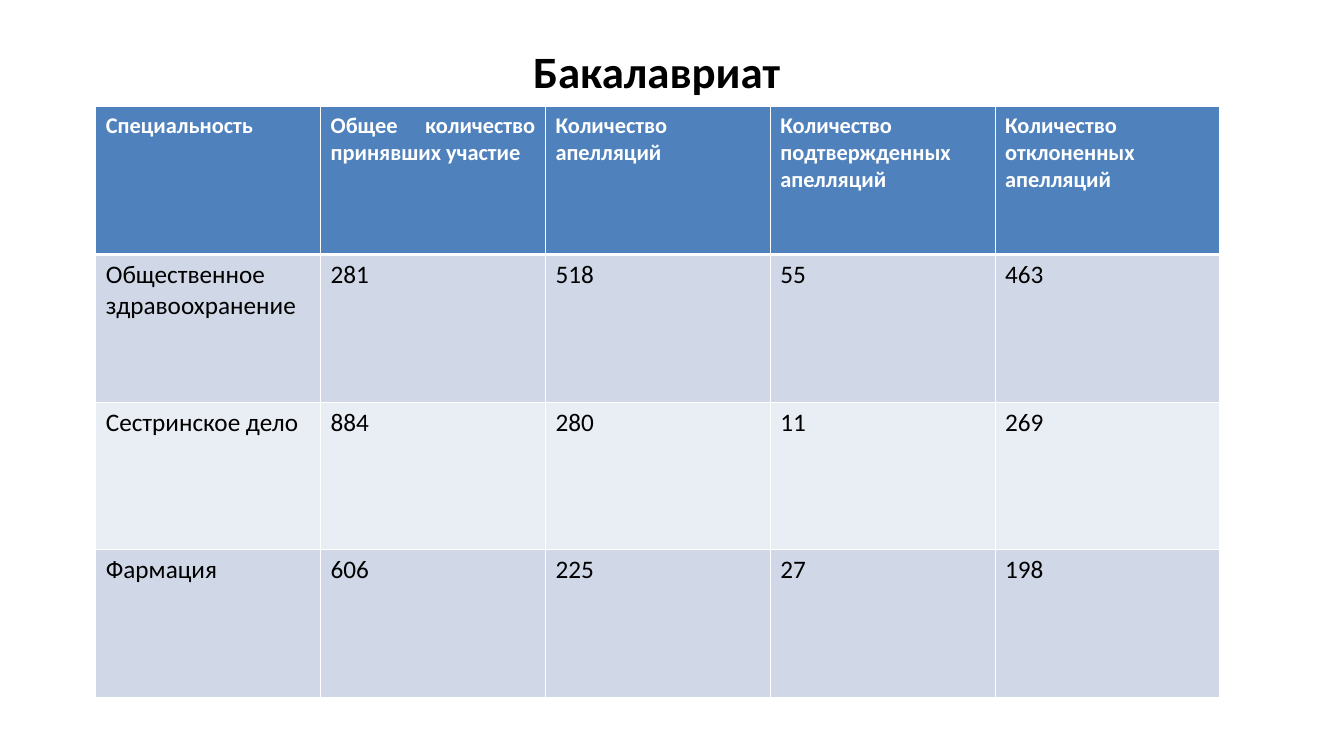
import dataclasses

import lxml.etree
import pptx
import pptx.dml.color
import pptx.enum.text
import pptx.oxml.ns
import pptx.util
from pptx.util import Inches

FONT = "Calibri"
WHITE, BLACK = "FFFFFF", "000000"
HEADER_FILL = "4F81BD"
BAND_FILLS = ("D0D8E8", "E9EDF4")
HEADERS = (
    "Специальность",
    "Общее количество принявших участие",
    "Количество апелляций",
    "Количество подтвержденных апелляций",
    "Количество отклоненных апелляций",
)
JUSTIFIED_COLUMN = 1
COLUMN_WIDTH, ROW_HEIGHT = 2.23, 1.465


@dataclasses.dataclass(frozen=True)
class Speciality:
    name: str
    participants: int
    appeals: int
    confirmed: int
    rejected: int


@dataclasses.dataclass(frozen=True)
class RowStyle:
    size: int
    color: str
    bold: bool
    fill: str
    top_border: int = 1
    bottom_border: int = 1


SPECIALITIES = (
    Speciality("Общественное здравоохранение", 281, 518, 55, 463),
    Speciality("Сестринское дело", 884, 280, 11, 269),
    Speciality("Фармация", 606, 225, 27, 198),
)


def rgb(color: str) -> pptx.dml.color.RGBColor:
    return pptx.dml.color.RGBColor.from_string(color)


def format_font(paragraph, size: int, color: str, bold: bool) -> None:
    for run in paragraph.runs:
        run.font.name = FONT
        run.font.size = pptx.util.Pt(size)
        run.font.bold = bold
        run.font.color.rgb = rgb(color)


def set_borders(cell, style: RowStyle) -> None:
    properties = cell._tc.get_or_add_tcPr()
    widths = {"lnL": 1, "lnR": 1, "lnT": style.top_border, "lnB": style.bottom_border}
    qn = pptx.oxml.ns.qn
    for position, (side, width) in enumerate(widths.items()):
        line = lxml.etree.Element(qn(f"a:{side}"), w=str(pptx.util.Pt(width)))
        fill = lxml.etree.SubElement(line, qn("a:solidFill"))
        lxml.etree.SubElement(fill, qn("a:srgbClr"), val=WHITE)
        properties.insert(position, line)


def fill_row(row, texts: tuple, style: RowStyle) -> None:
    row.height = Inches(ROW_HEIGHT)
    for cell, text in zip(row.cells, texts):
        cell.text_frame.text = str(text)
        format_font(cell.text_frame.paragraphs[0], style.size, style.color, style.bold)
        cell.fill.solid()
        cell.fill.fore_color.rgb = rgb(style.fill)
        set_borders(cell, style)


def add_title(slide, text: str) -> None:
    title = slide.shapes.title
    title.left, title.top = Inches(4.04), Inches(0.38)
    title.width, title.height = Inches(4.95), Inches(0.64)
    frame = title.text_frame
    frame.text = text
    frame.auto_size = pptx.enum.text.MSO_AUTO_SIZE.NONE
    frame.vertical_anchor = pptx.enum.text.MSO_ANCHOR.TOP
    frame.paragraphs[0].alignment = pptx.enum.text.PP_ALIGN.CENTER
    format_font(frame.paragraphs[0], 32, BLACK, True)


def add_appeals_table(slide) -> None:
    row_count, column_count = len(SPECIALITIES) + 1, len(HEADERS)
    table = slide.shapes.add_table(
        row_count, column_count, Inches(0.95), Inches(1.06),
        Inches(COLUMN_WIDTH * column_count), Inches(ROW_HEIGHT * row_count),
    ).table
    for column in table.columns:
        column.width = Inches(COLUMN_WIDTH)

    fill_row(table.rows[0], HEADERS, RowStyle(16, WHITE, True, HEADER_FILL, bottom_border=3))
    justified = table.cell(0, JUSTIFIED_COLUMN).text_frame.paragraphs[0]
    justified.alignment = pptx.enum.text.PP_ALIGN.JUSTIFY

    for index, speciality in enumerate(SPECIALITIES):
        fill = BAND_FILLS[index % len(BAND_FILLS)]
        style = RowStyle(18, BLACK, False, fill, top_border=1 if index else 3)
        fill_row(table.rows[index + 1], dataclasses.astuple(speciality), style)


def main() -> None:
    presentation = pptx.Presentation()
    presentation.slide_width = Inches(13.33)
    presentation.slide_height = Inches(7.5)
    slide = presentation.slides.add_slide(presentation.slide_layouts.get_by_name("Title Only"))
    add_title(slide, "Бакалавриат")
    add_appeals_table(slide)
    presentation.save("out.pptx")


if __name__ == "__main__":
    main()
